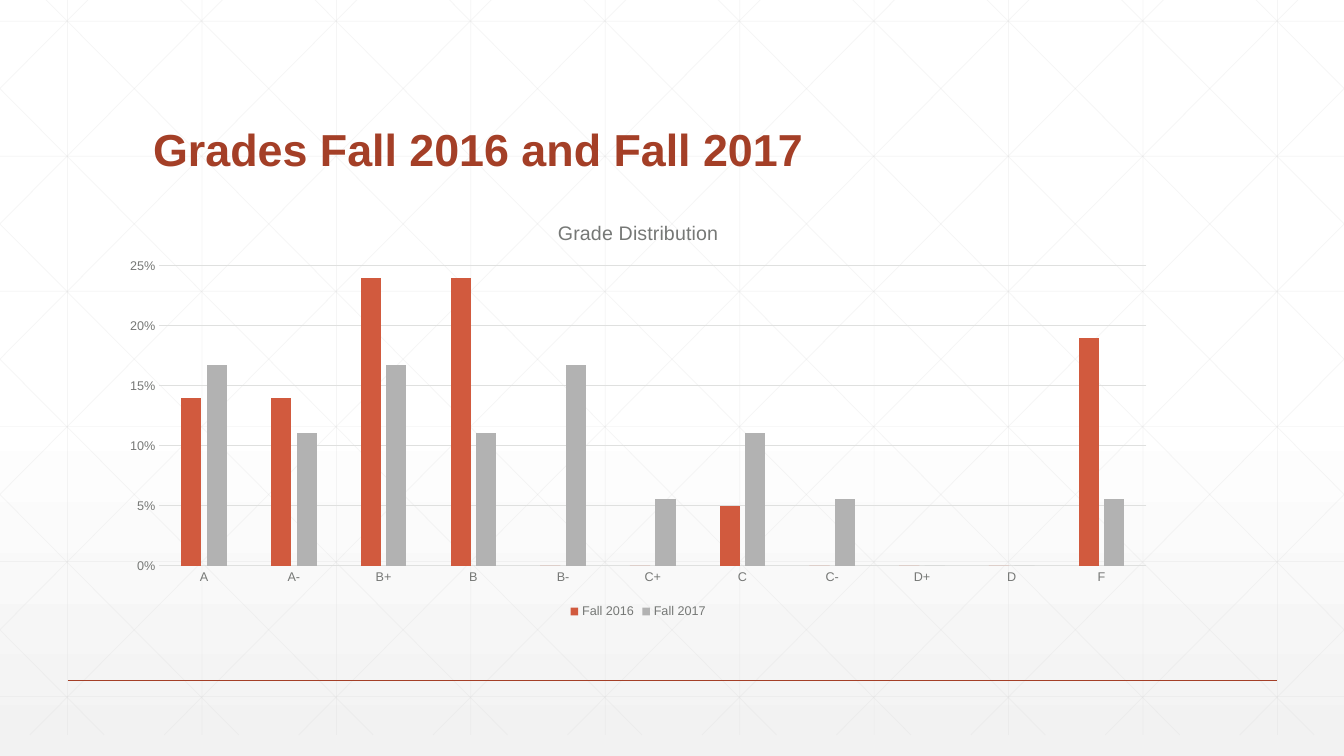
from dataclasses import dataclass

import lxml.etree
import pptx
import pptx.chart.data
import pptx.dml.color
import pptx.enum.chart
import pptx.enum.shapes
import pptx.enum.text
import pptx.oxml.ns
from pptx.util import Inches

FONT = "Arial"
RUST, MESH_GRAY, AXIS_GRAY, RULE_GRAY = "A43F27", "D9D9D9", "767876", "DFE0DF"
WIDTH, HEIGHT = 13.33, 7.5
MESH_TOP, MESH_BOTTOM, MESH_STEP = -0.21, 7.29, 4 / 3
DIAGONAL_RUN = 7.45


@dataclass
class Line:
    x1: float
    y1: float
    x2: float
    y2: float
    color: str = MESH_GRAY
    weight: float = 0.5
    opacity: int = 25


@dataclass
class GradeSeries:
    name: str
    shares: list[float]
    color: str


GRADES = ["A", "A-", "B+", "B", "B-", "C+", "C", "C-", "D+", "D", "F"]
TERMS = [
    GradeSeries("Fall 2016", [0.14, 0.14, 0.24, 0.24, 0, 0, 0.05, 0, 0, 0, 0.19], "D15A3E"),
    GradeSeries("Fall 2017", [0.167, 0.111, 0.167, 0.111, 0.167, 0.056, 0.111, 0.056, 0, 0, 0.056],
                "B2B2B2"),
]


def rgb(color: str) -> pptx.dml.color.RGBColor:
    return pptx.dml.color.RGBColor.from_string(color)


def style_font(font, size: float, color: str, bold: bool = False) -> None:
    font.name, font.size, font.bold = FONT, pptx.util.Pt(size), bold
    font.color.rgb = rgb(color)


def style_line(line, color: str, weight: float) -> None:
    line.color.rgb = rgb(color)
    line.width = pptx.util.Pt(weight)


def add_child(parent, tag: str, **attributes: str):
    return lxml.etree.SubElement(parent, pptx.oxml.ns.qn(tag), attributes)


def draw_line(slide, line: Line) -> None:
    connector = slide.shapes.add_connector(
        pptx.enum.shapes.MSO_CONNECTOR.STRAIGHT,
        Inches(line.x1), Inches(line.y1), Inches(line.x2), Inches(line.y2))
    style_line(connector.line, line.color, line.weight)
    properties = connector._element.spPr
    if line.opacity < 100:
        tint = properties.find(".//" + pptx.oxml.ns.qn("a:srgbClr"))
        add_child(tint, "a:alpha", val=str(line.opacity * 1000))
    add_child(properties, "a:effectLst")


def falling_diagonal(top_x: float) -> Line:
    """A diagonal from the mesh top to its bottom, cut at the slide sides."""
    slope = (MESH_BOTTOM - MESH_TOP) / DIAGONAL_RUN
    left, right = max(top_x, 0), min(top_x + DIAGONAL_RUN, WIDTH)
    return Line(left, MESH_TOP + (left - top_x) * slope,
                right, MESH_TOP + (right - top_x) * slope)


def mesh_lines() -> list[Line]:
    columns = [0.67 + MESH_STEP * i for i in range(10)]
    rows = [0.21 + 1.34 * i for i in range(6)]
    falling = [falling_diagonal(0.25 + MESH_STEP * i) for i in range(-5, 10)]
    rising = [Line(WIDTH - d.x1, d.y1, WIDTH - d.x2, d.y2) for d in falling]
    return ([Line(x, MESH_TOP, x, MESH_BOTTOM) for x in columns]
            + [Line(0, y, WIDTH, y) for y in rows] + falling + rising)


def paint_background(slide) -> None:
    fill = slide.background.fill
    fill.gradient()
    fill.gradient_angle = 270
    stops = fill.gradient_stops._gsLst
    for stop in list(stops):
        stops.remove(stop)
    for position, color in [(0, "FFFFFF"), (53, "FFFFFF"), (100, "F2F2F2")]:
        stop = add_child(stops, "a:gs", pos=str(position * 1000))
        add_child(stop, "a:srgbClr", val=color)


def add_title(slide) -> None:
    frame = slide.shapes.add_textbox(
        Inches(1.42), Inches(0.55), Inches(10.5), Inches(1.25)).text_frame
    frame.word_wrap = True
    frame.vertical_anchor = pptx.enum.text.MSO_ANCHOR.BOTTOM
    heading = frame.paragraphs[0]
    heading.text = "Grades Fall 2016 and Fall 2017"
    heading.line_spacing = 0.9
    style_font(heading.font, 32, RUST, bold=True)


def add_grade_chart(slide) -> None:
    grades = pptx.chart.data.CategoryChartData(number_format="0.0%")
    grades.categories = GRADES
    for term in TERMS:
        grades.add_series(term.name, term.shares)
    chart = slide.shapes.add_chart(
        pptx.enum.chart.XL_CHART_TYPE.COLUMN_CLUSTERED,
        Inches(1.08), Inches(2.01), Inches(10.5), Inches(4.17), grades).chart
    style_font(chart.font, 10, "2D2E2D")

    # Chart title and legend
    chart.has_title = True
    caption = chart.chart_title.text_frame.paragraphs[0]
    caption.text = "Grade Distribution"
    style_font(caption.font, 14, AXIS_GRAY)
    chart.chart_title.include_in_layout = False
    chart.has_legend = True
    chart.legend.position = pptx.enum.chart.XL_LEGEND_POSITION.BOTTOM
    chart.legend.include_in_layout = False
    style_font(chart.legend.font, 9, AXIS_GRAY)

    # Axes
    for axis in (chart.category_axis, chart.value_axis):
        axis.major_tick_mark = axis.minor_tick_mark = pptx.enum.chart.XL_TICK_MARK.NONE
        style_font(axis.tick_labels.font, 9, AXIS_GRAY)
    style_line(chart.category_axis.format.line, RULE_GRAY, 0.75)
    shares = chart.value_axis
    shares.minimum_scale, shares.maximum_scale, shares.major_unit = 0, 0.25, 0.05
    shares.tick_labels.number_format = "0%"
    shares.tick_labels.number_format_is_linked = False
    shares.format.line.fill.background()
    style_line(shares.major_gridlines.format.line, RULE_GRAY, 0.75)

    # Columns
    columns = chart.plots[0]
    columns.gap_width, columns.overlap, columns.vary_by_categories = 219, -27, False
    for series, term in zip(columns.series, TERMS):
        series.format.fill.solid()
        series.format.fill.fore_color.rgb = rgb(term.color)
        series.invert_if_negative = False


def main() -> None:
    deck = pptx.Presentation()
    deck.slide_width, deck.slide_height = Inches(WIDTH), Inches(HEIGHT)
    slide = deck.slides.add_slide(deck.slide_layouts[6])

    # Backdrop: gradient, mesh and footer rule
    paint_background(slide)
    footer_rule = Line(0.67, 6.75, 12.67, 6.75, RUST, 1, 100)
    for line in mesh_lines() + [footer_rule]:
        draw_line(slide, line)

    # Content
    add_title(slide)
    add_grade_chart(slide)
    deck.save("out.pptx")


if __name__ == "__main__":
    main()
